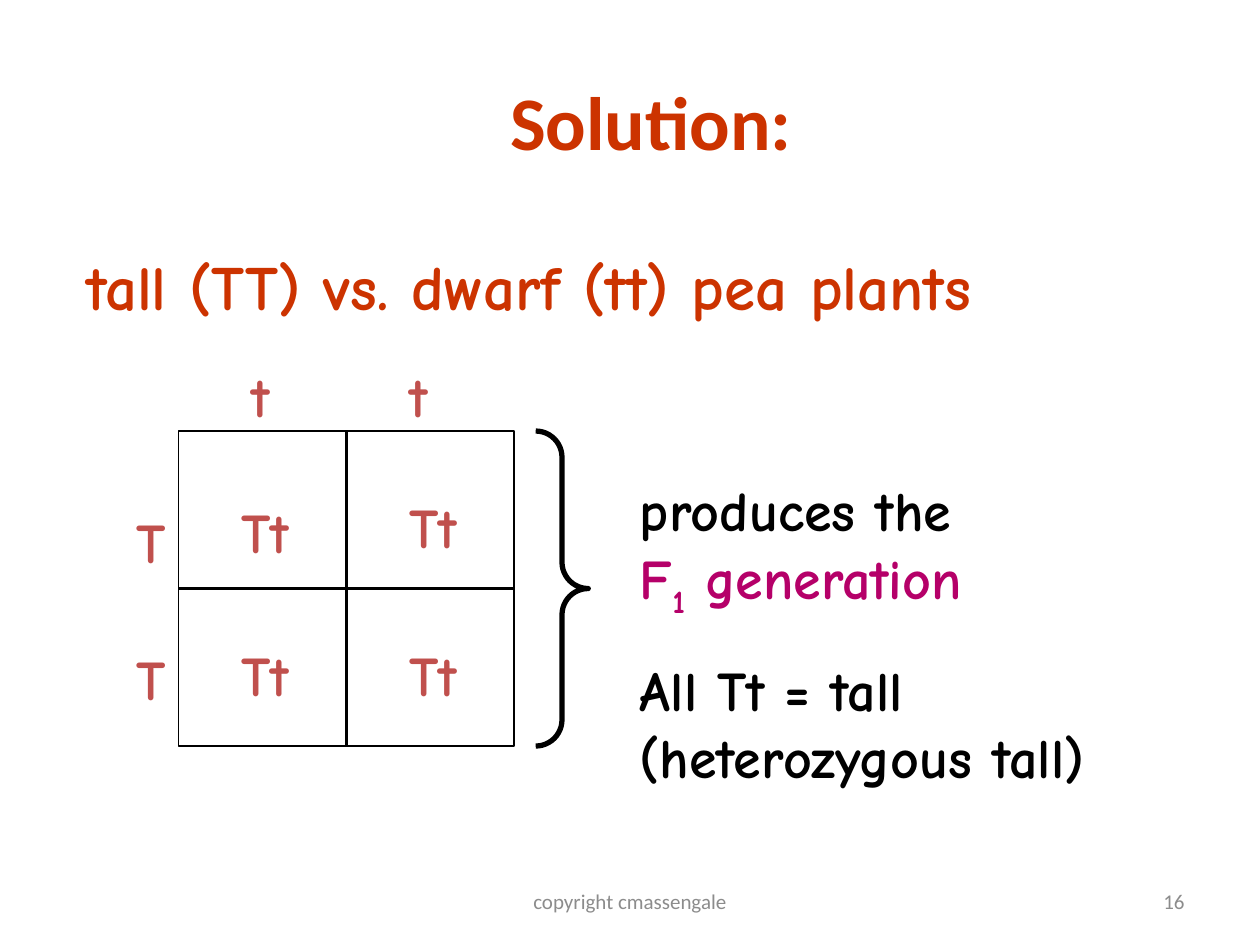
"""Build a slide that solves a monohybrid cross with a Punnett square."""
from lxml import etree
from pptx import Presentation
from pptx import util as u
from pptx.dml.color import RGBColor
from pptx.enum import shapes, text
from pptx.oxml import ns

COLORS = {"heading": "CC3300", "allele": "C0504D", "ink": "000000",
          "generation": "B50069", "footer": "8C8C8C"}


def format_runs(paragraph, font_name, size, color, bold=True):
    for run in paragraph.runs:
        run.font.name = font_name
        run.font.size = u.Pt(size)
        run.font.bold = bold
        run.font.color.rgb = RGBColor.from_string(COLORS[color])


def add_label(left, top, width, height, content, color="ink", size=32,
              font_name="Comic Neue", bold=True, align=text.PP_ALIGN.LEFT):
    label = slide.shapes.add_textbox(u.Cm(left), u.Cm(top), u.Cm(width), u.Cm(height))
    label.text_frame.word_wrap = False
    label.text_frame.text = content
    for paragraph in label.text_frame.paragraphs:
        paragraph.alignment = align
        format_runs(paragraph, font_name, size, color, bold)
    return label


presentation = Presentation()
presentation.slide_width = u.Cm(25.4)
presentation.slide_height = u.Cm(19.05)
slide = presentation.slides.add_slide(presentation.slide_layouts[1])

title, body = slide.placeholders
for placeholder, box, content, font_name, size in (
    (title, (0.85, 1.69, 24.55, 1.48), "Solution:", "Calibri", 43.2),
    (body, (1.48, 4.87, 22.65, 1.78), "tall (TT) vs. dwarf (tt) pea plants", "Comic Neue", 36),
):
    placeholder.left, placeholder.top, placeholder.width, placeholder.height = map(u.Cm, box)
    placeholder.text_frame.text = content
    placeholder.text_frame.auto_size = text.MSO_AUTO_SIZE.NONE
    format_runs(placeholder.text_frame.paragraphs[0], font_name, size, "heading")

paragraph = body.text_frame.paragraphs[0]
paragraph.space_before = u.Pt(0)
properties = paragraph._p.get_or_add_pPr()
properties.set("marL", "0")
properties.set("indent", "0")
etree.SubElement(properties, ns.qn("a:buNone"))

left, top, width, height = 3.6, 8.69, 6.77, 6.35
middle_x, middle_y = left + width / 2, top + height / 2

for allele_top in (10.1, 12.87):
    add_label(2.5, allele_top, 1.3, 1.6, "T", "allele")
for allele_left in (4.82, 8.0):
    add_label(allele_left, 7.17, 1.04, 1.6, "t", "allele")

for start_x, start_y, end_x, end_y in (
    (middle_x, top, middle_x, top + height),
    (left, middle_y, left + width, middle_y),
):
    divider = slide.shapes.add_connector(
        shapes.MSO_CONNECTOR.STRAIGHT, u.Cm(start_x), u.Cm(start_y), u.Cm(end_x), u.Cm(end_y))
    divider.line.color.rgb = RGBColor.from_string(COLORS["ink"])
    divider.line.width = u.Pt(2)
    etree.SubElement(divider._element.spPr, ns.qn("a:effectLst"))

for kind, shape_left, shape_width, weight in (
    (shapes.MSO_SHAPE.RECTANGLE, left, width, 1),
    (shapes.MSO_SHAPE.RIGHT_BRACE, 10.8, 1.06, 3),
):
    shape = slide.shapes.add_shape(
        kind, u.Cm(shape_left), u.Cm(top), u.Cm(shape_width), u.Cm(height))
    shape.shadow.inherit = False
    shape.fill.background()
    shape.line.color.rgb = RGBColor.from_string(COLORS["ink"])
    shape.line.width = u.Pt(weight)
    if kind == shapes.MSO_SHAPE.RIGHT_BRACE:
        shape.adjustments[0] = 0.5

for offspring_left, offspring_top in ((4.62, 9.9), (4.62, 12.78), (8.0, 9.8), (8.0, 12.78)):
    add_label(offspring_left, offspring_top, 1.83, 1.6, "Tt", "allele")

add_label(12.65, 13.08, 10.74, 2.95, "All Tt = tall\n(heterozygous tall)")
result = add_label(12.65, 9.47, 7.8, 2.95, "produces the")
paragraph = result.text_frame.add_paragraph()
for content in ("F", "1", " generation"):
    paragraph.add_run().text = content
format_runs(paragraph, "Comic Neue", 32, "generation")
paragraph.runs[1].font._element.set("baseline", "-25000")

for footer_left, footer_width, content, align in (
    (8.68, 8.04, "copyright cmassengale", text.PP_ALIGN.CENTER),
    (18.2, 5.93, "16", text.PP_ALIGN.RIGHT),
):
    footer = add_label(footer_left, 17.66, footer_width, 1.01, content, "footer", 12,
                       "Calibri", False, align)
    footer.text_frame.word_wrap = True
    footer.text_frame.vertical_anchor = text.MSO_ANCHOR.MIDDLE

presentation.save("out.pptx")
